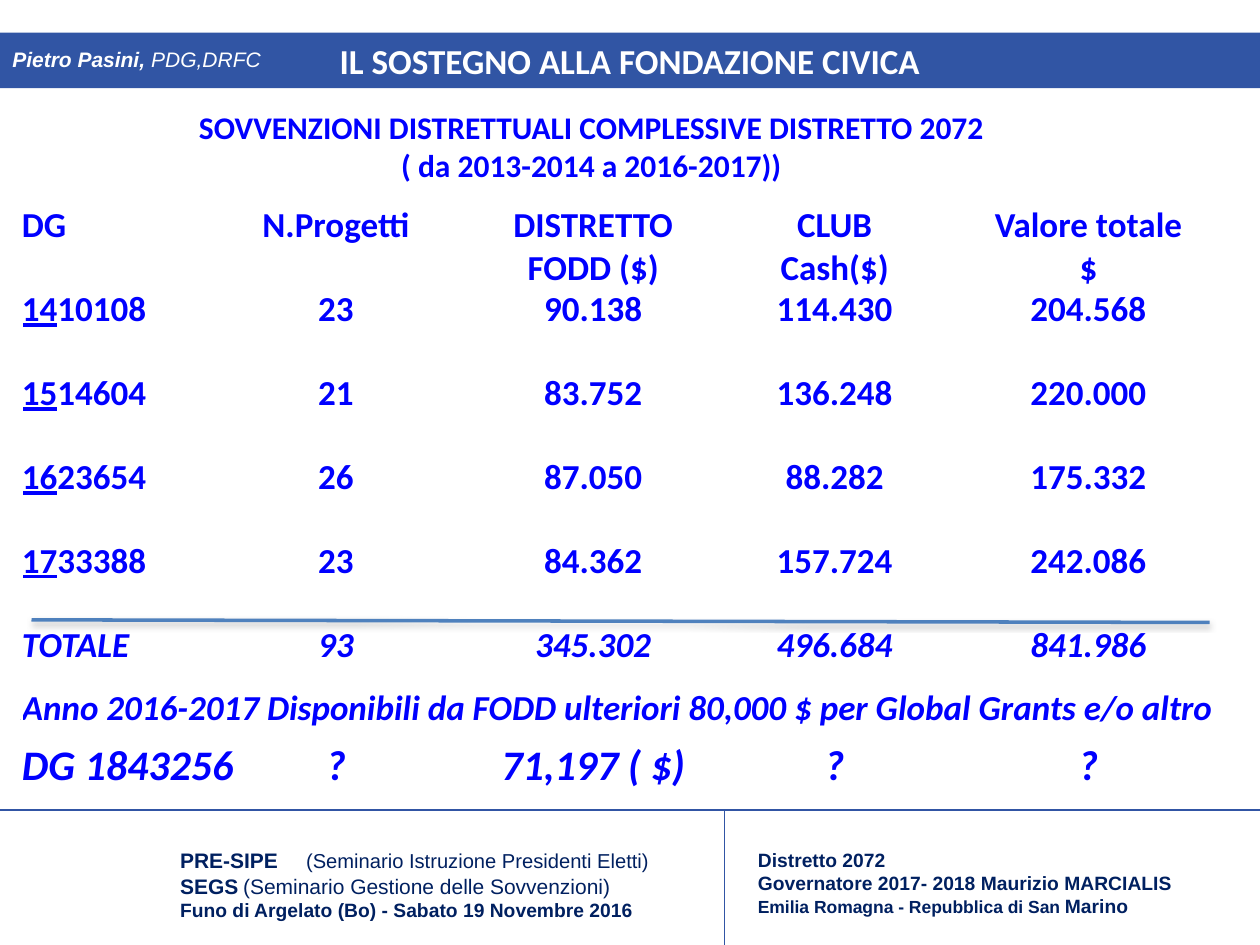
from lxml import etree
from pptx import Presentation
from pptx import util as u
from pptx.dml.color import RGBColor
from pptx.enum import shapes, text
from pptx.oxml import ns

Pt = u.Pt
BAND_BLUE = RGBColor(0x31, 0x55, 0xA4)
TEXT_BLUE = RGBColor(0x00, 0x00, 0xFF)
NAVY = RGBColor(0x00, 0x20, 0x60)
RULE_BLUE = RGBColor(0x4F, 0x81, 0xBD)
WHITE = RGBColor(0xFF, 0xFF, 0xFF)

LEFT, CENTER = text.PP_ALIGN.LEFT, text.PP_ALIGN.CENTER

COLUMN_WIDTHS = [123.5, 112, 182, 94, 196]
HEADINGS = ["DG", "N.Progetti", "DISTRETTO\vFODD ($)", "CLUB\vCash($)", "Valore totale\v$"]
GRANTS = [
    ["1410108", "23", "90.138", "114.430", "204.568"],
    ["1514604", "21", "83.752", "136.248", "220.000"],
    ["1623654", "26", "87.050", "88.282", "175.332"],
    ["1733388", "23", "84.362", "157.724", "242.086"],
]
TOTALS = ["TOTALE", "93", "345.302", "496.684", "841.986"]
NOTE = "Anno 2016-2017 Disponibili da FODD ulteriori 80,000 $ per Global Grants e/o altro"
FORECAST = ["DG 1843256", "?", "71,197 ( $)", "?", "?"]


def add_run(paragraph, words, size, color, font="Arial", bold=True, italic=False, underline=False):
    run = paragraph.add_run()
    run.text = words
    run.font.name, run.font.size = font, Pt(size)
    run.font.bold, run.font.italic = bold, italic
    if underline:
        run.font.underline = True
    run.font.color.rgb = color


def add_tabs(paragraph, stops):
    tab_list = etree.SubElement(paragraph._p.get_or_add_pPr(), ns.qn("a:tabLst"))
    for stop in stops:
        etree.SubElement(tab_list, ns.qn("a:tab"), pos=str(Pt(stop)), algn="l")


def add_text(slide, left, top, width, height, lines, color, font="Arial",
             align=LEFT, wrap=True, tabs=()):
    frame = slide.shapes.add_textbox(Pt(left), Pt(top), Pt(width), Pt(height)).text_frame
    frame.word_wrap = wrap
    for index, line in enumerate(lines):
        paragraph = frame.add_paragraph() if index else frame.paragraphs[0]
        paragraph.alignment = align
        if tabs:
            add_tabs(paragraph, tabs)
        for words, size, style in line:
            add_run(paragraph, words, size, color, font, **style)


def add_band(slide, title):
    band = slide.shapes.add_shape(shapes.MSO_SHAPE.RECTANGLE, 0, Pt(18.7), Pt(720), Pt(31.7))
    band.shadow.inherit = False
    band.fill.solid()
    band.fill.fore_color.rgb = BAND_BLUE
    band.line.fill.background()
    band.text_frame.vertical_anchor = text.MSO_ANCHOR.MIDDLE
    paragraph = band.text_frame.paragraphs[0]
    paragraph.alignment = CENTER
    add_run(paragraph, title, 20, WHITE, "Calibri")


def add_line(slide, start, end, color, weight, shadow=False):
    line = slide.shapes.add_connector(
        shapes.MSO_CONNECTOR.STRAIGHT, *(Pt(value) for value in start + end))
    line.line.color.rgb = color
    line.line.width = Pt(weight)
    effects = etree.SubElement(line._element.spPr, ns.qn("a:effectLst"))
    if shadow:
        outer = etree.SubElement(effects, ns.qn("a:outerShdw"), blurRad=str(Pt(3.1)),
                                 dist=str(Pt(1.6)), dir="5400000", rotWithShape="0")
        shade = etree.SubElement(outer, ns.qn("a:srgbClr"), val="808080")
        etree.SubElement(shade, ns.qn("a:alpha"), val="38000")


def fill_row(table, row, entries, size=20, italic=False, year_digits=0):
    for column, entry in enumerate(entries):
        paragraph = table.cell(row, column).text_frame.paragraphs[0]
        paragraph.alignment = CENTER if column else LEFT
        if year_digits and column == 0:
            add_run(paragraph, entry[:year_digits], size, TEXT_BLUE, "Calibri", underline=True)
            entry = entry[year_digits:]
        for index, part in enumerate(entry.split("\v")):
            if index:
                paragraph.add_line_break()
            add_run(paragraph, part, size, TEXT_BLUE, "Calibri", italic=italic)


def add_grants_table(slide):
    heights = [48] * (1 + len(GRANTS)) + [36, 30.5, 30]
    table = slide.shapes.add_table(
        len(heights), len(COLUMN_WIDTHS), Pt(12.5), Pt(116.5),
        Pt(sum(COLUMN_WIDTHS)), Pt(sum(heights))).table
    table.first_row = table.horz_banding = False
    for column, width in zip(table.columns, COLUMN_WIDTHS):
        column.width = Pt(width)
    for row, height in zip(table.rows, heights):
        row.height = Pt(height)
    for cell in table.iter_cells():
        cell.fill.background()
        cell.margin_left = cell.margin_right = cell.margin_top = cell.margin_bottom = 0

    fill_row(table, 0, HEADINGS)
    for row, grant in enumerate(GRANTS, 1):
        fill_row(table, row, grant, year_digits=2)
    total_row = len(GRANTS) + 1
    note_row, forecast_row = total_row + 1, total_row + 2
    fill_row(table, total_row, TOTALS, italic=True)
    table.cell(note_row, 0).merge(table.cell(note_row, len(COLUMN_WIDTHS) - 1))
    fill_row(table, note_row, [NOTE], italic=True)
    fill_row(table, forecast_row, FORECAST, size=24, italic=True)


def add_footer(slide):
    plain = {"bold": False}
    add_line(slide, (0, 463), (720, 463), BAND_BLUE, 1)
    add_line(slide, (414, 463), (414, 540), BAND_BLUE, 1)
    add_text(slide, 95.8, 481, 312, 50, [
        [("PRE-SIPE\t", 12, {}), ("(Seminario Istruzione Presidenti Eletti)", 11.5, plain)],
        [("SEGS\t", 12, {}), ("(Seminario Gestione delle Sovvenzioni)", 12, plain)],
        [("Funo di Argelato (Bo) - Sabato 19 Novembre 2016", 11, {})],
    ], NAVY, tabs=(36, 72))
    add_text(slide, 426, 481, 264, 48, [
        [("Distretto 2072", 11, {})],
        [("Governatore 2017- 2018 Maurizio MARCIALIS", 11, {})],
        [("Emilia Romagna - Repubblica di San ", 10, {}), ("Marino", 11, {})],
    ], NAVY)


def main():
    deck = Presentation()
    deck.slide_width, deck.slide_height = Pt(720), Pt(540)
    slide = deck.slides.add_slide(deck.slide_layouts[6])
    add_footer(slide)
    add_grants_table(slide)
    add_band(slide, "IL SOSTEGNO ALLA FONDAZIONE CIVICA")
    add_text(slide, 0, 23, 158, 21.6, [
        [("Pietro Pasini, ", 12, {"italic": True}),
         ("PDG,DRFC", 12, {"bold": False, "italic": True})],
    ], WHITE, wrap=False)
    add_text(slide, 63, 58.3, 550, 51, [
        [("SOVVENZIONI DISTRETTUALI COMPLESSIVE DISTRETTO 2072", 18, {})],
        [("( da 2013-2014 a 2016-2017))", 18, {})],
    ], TEXT_BLUE, "Calibri", CENTER)
    add_line(slide, (18, 354.2), (691.2, 355.7), RULE_BLUE, 2, shadow=True)
    deck.save("out.pptx")


if __name__ == "__main__":
    main()
